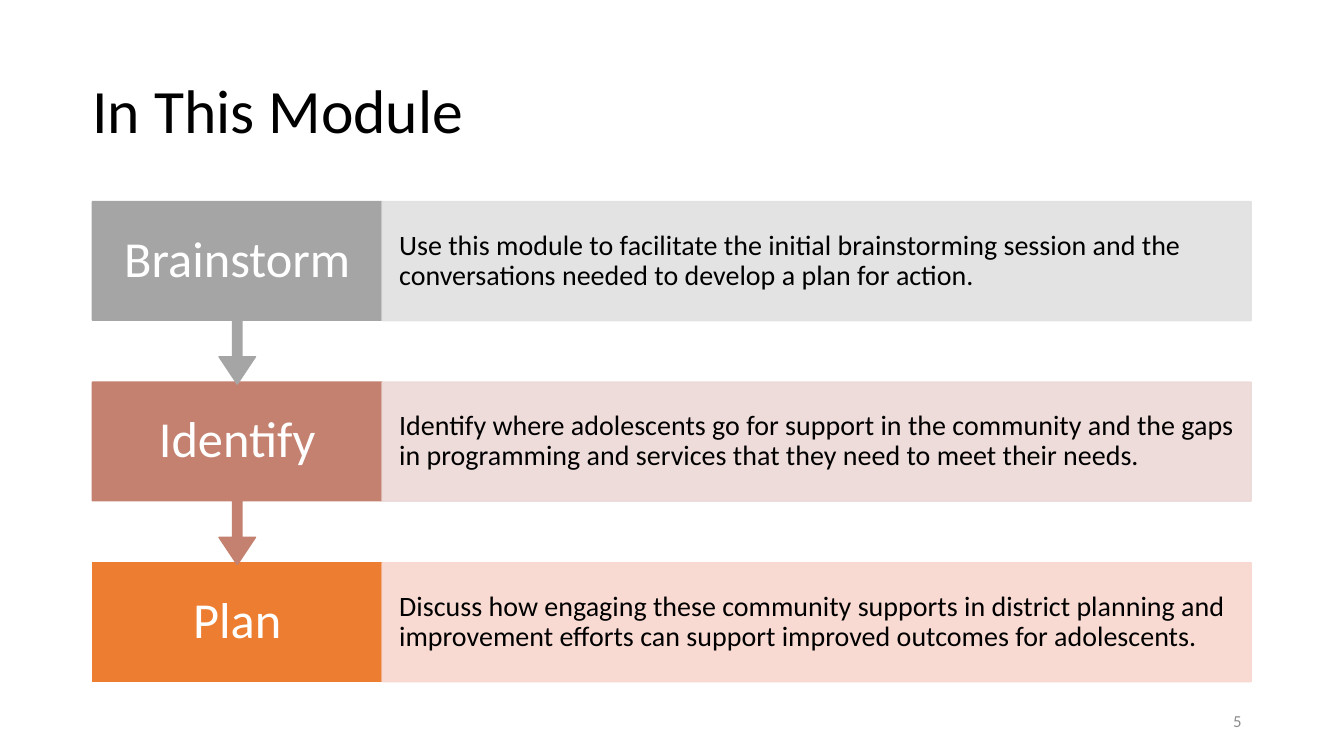
import pptx
import pptx.dml.color
import pptx.enum.shapes
import pptx.enum.text
import pptx.oxml
import pptx.oxml.ns
import pptx.util

Cm = pptx.util.Cm
Pt = pptx.util.Pt
SHAPE = pptx.enum.shapes.MSO_SHAPE
ALIGN = pptx.enum.text.PP_ALIGN

TITLE = "In This Module"
PAGE_NUMBER = "5"
STEPS = [
    ("Brainstorm", "gray", "pale_gray",
     "Use this module to facilitate the initial brainstorming session and the "
     "conversations needed to develop a plan for action."),
    ("Identify", "clay", "pale_clay",
     "Identify where adolescents go for support in the community and the gaps "
     "in programming and services that they need to meet their needs."),
    ("Plan", "orange", "pale_orange",
     "Discuss how engaging these community supports in district planning and "
     "improvement efforts can support improved outcomes for adolescents."),
]
COLORS = {
    "black": "000000", "white": "FFFFFF", "number": "8C8C8C",
    "gray": "A5A5A5", "pale_gray": "E1E1E1",
    "clay": "C48170", "pale_clay": "EDD9D7",
    "orange": "ED7D31", "pale_orange": "F8D7CE",
}
FONT = "Calibri"

# Lengths in centimetres
LEFT, TOP = 2.33, 5.08
LABEL_WIDTH, DETAIL_WIDTH = 7.3, 21.9
ROW_HEIGHT, ROW_STEP, CALLOUT_HEIGHT = 3.0, 4.55, 4.6
CALLOUT_ADJUSTMENTS = (0.05, 0.1, 0.15, 0.65)
LABEL_INSETS = (0.51, 0.71, 0.51, 0.71)
DETAIL_INSETS = (0.43, 0.71, 0.43, 0.71)


def color(name):
    return pptx.dml.color.RGBColor.from_string(COLORS[name])


def write(shape, text, size, color_name, align, insets, line_spacing=0.9):
    """Fill a shape with one vertically centred paragraph; insets run left, top, right, bottom."""
    frame = shape.text_frame
    frame.word_wrap = True
    frame.vertical_anchor = pptx.enum.text.MSO_ANCHOR.MIDDLE
    (frame.margin_left, frame.margin_top,
     frame.margin_right, frame.margin_bottom) = map(Cm, insets)
    para = frame.paragraphs[0]
    para.alignment = align
    para.line_spacing = line_spacing
    span = para.add_run()
    span.text = text
    span.font.name = FONT
    span.font.size = Pt(size)
    span.font.color.rgb = color(color_name)


def add_block(page, kind, bounds, color_name):
    block = page.shapes.add_shape(kind, *map(Cm, bounds))
    block.shadow.inherit = False
    block.fill.solid()
    block.fill.fore_color.rgb = color(color_name)
    block.line.color.rgb = color(color_name)
    block.line.width = Pt(1)
    return block


def soften(block):
    """Make the fill and line of a block 90 % opaque."""
    properties = block.fill._xPr
    for tone in properties.iter(pptx.oxml.ns.qn("a:srgbClr")):
        alpha = pptx.oxml.parse_xml(
            f'<a:alpha {pptx.oxml.ns.nsdecls("a")} val="90000"/>')
        tone.append(alpha)


def add_step(page, index):
    label, strong, pale, detail = STEPS[index]
    top = TOP + index * ROW_STEP
    if index == len(STEPS) - 1:
        head = add_block(page, SHAPE.RECTANGLE,
                         (LEFT, top, LABEL_WIDTH, ROW_HEIGHT), strong)
    else:
        head = add_block(page, SHAPE.DOWN_ARROW_CALLOUT,
                         (LEFT, top, LABEL_WIDTH, CALLOUT_HEIGHT), strong)
        for position, value in enumerate(CALLOUT_ADJUSTMENTS):
            head.adjustments[position] = value
    write(head, label, 36, "white", ALIGN.CENTER, LABEL_INSETS)

    body = add_block(page, SHAPE.RECTANGLE,
                     (LEFT + LABEL_WIDTH, top, DETAIL_WIDTH, ROW_HEIGHT), pale)
    soften(body)
    write(body, detail, 20, "black", ALIGN.LEFT, DETAIL_INSETS)


def main():
    deck = pptx.Presentation()
    deck.slide_width, deck.slide_height = Cm(33.87), Cm(19.05)
    page = deck.slides.add_slide(deck.slide_layouts[6])

    title = page.shapes.add_textbox(Cm(LEFT), Cm(1.01), Cm(29.2), Cm(3.68))
    write(title, TITLE, 44, "black", ALIGN.LEFT, (0, 0.13, 0.25, 0.13))

    # The last step goes first so that each arrow tip lies over the next step
    for index in reversed(range(len(STEPS))):
        add_step(page, index)

    number = page.shapes.add_textbox(Cm(23.92), Cm(17.65), Cm(7.62), Cm(1.01))
    write(number, PAGE_NUMBER, 12, "number", ALIGN.RIGHT,
          (0.25, 0.13, 0.25, 0.13), line_spacing=1.0)

    deck.save("out.pptx")


if __name__ == "__main__":
    main()
